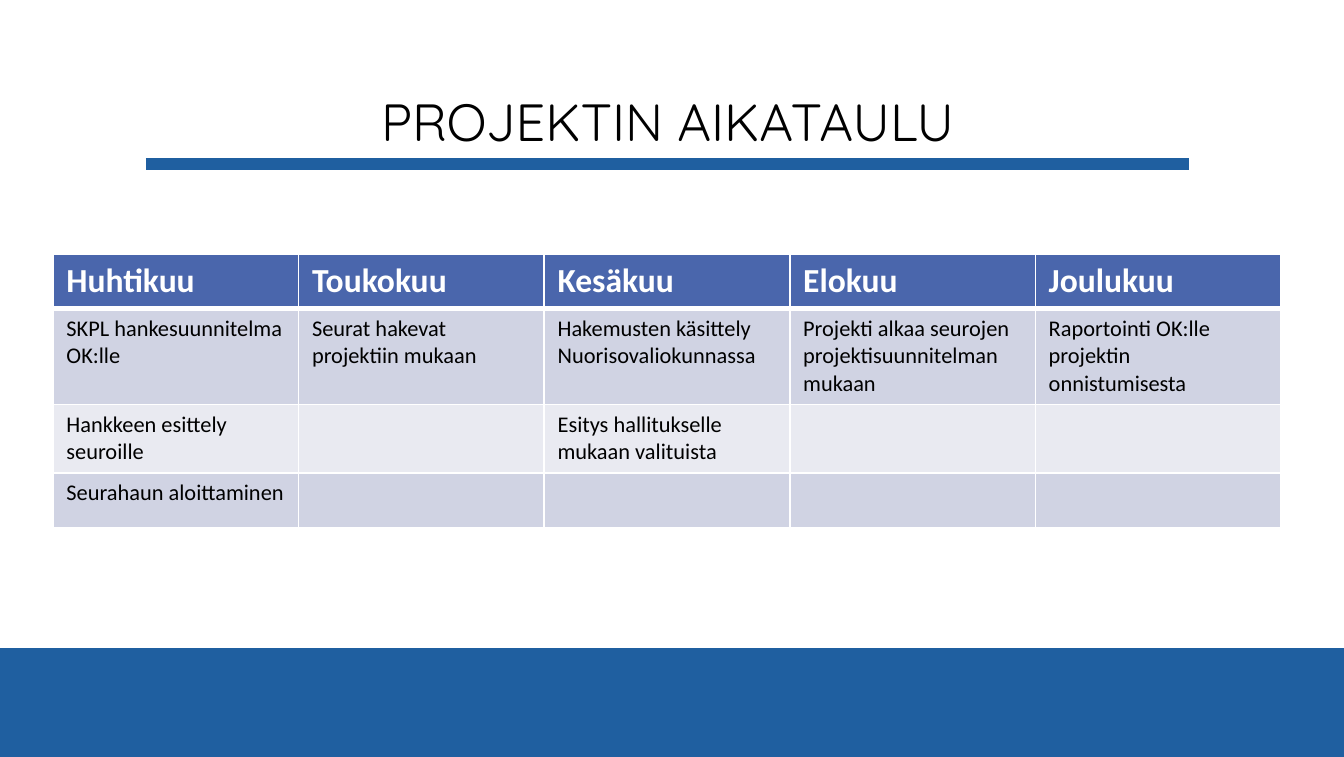
import pptx
import pptx.dml.color
import pptx.enum.shapes
import pptx.enum.text
import pptx.oxml
import pptx.oxml.ns
import pptx.util

PX = 914400 / 134.4
WIDTH, HEIGHT = 1344, 757
COLORS = {
    "blue": "1F5FA0",
    "header": "4A66AC",
    "odd": "D0D3E3",
    "even": "E9EAF1",
    "white": "FFFFFF",
    "black": "000000",
}
ROW_HEIGHTS = [54, 96, 67, 54]
SCHEDULE = [
    ["Huhtikuu", "Toukokuu", "Kesäkuu", "Elokuu", "Joulukuu"],
    [
        "SKPL hankesuunnitelma OK:lle",
        "Seurat hakevat projektiin mukaan",
        "Hakemusten käsittely Nuorisovaliokunnassa",
        "Projekti alkaa seurojen projektisuunnitelman mukaan",
        "Raportointi OK:lle projektin onnistumisesta",
    ],
    ["Hankkeen esittely seuroille", "", "Esitys hallitukselle mukaan valituista", "", ""],
    ["Seurahaun aloittaminen", "", "", "", ""],
]


def px(n):
    return pptx.util.Emu(round(n * PX))


def color(name):
    return pptx.dml.color.RGBColor.from_string(COLORS[name])


def add_run(p, text, size, font, color_name, bold=False):
    r = p.add_run()
    r.text = text
    r.font.size = pptx.util.Pt(size)
    r.font.name = font
    r.font.bold = bold
    r.font.color.rgb = color(color_name)


def add_band(slide, x, y, w, h):
    s = slide.shapes.add_shape(
        pptx.enum.shapes.MSO_SHAPE.RECTANGLE, px(x), px(y), px(w), px(h))
    s.shadow.inherit = False
    s.fill.solid()
    s.fill.fore_color.rgb = color("blue")
    s.line.fill.background()


def add_rule(slide, x1, x2, y, weight):
    s = slide.shapes.add_connector(
        pptx.enum.shapes.MSO_CONNECTOR.STRAIGHT, px(x1), px(y), px(x2), px(y))
    s.line.color.rgb = color("blue")
    s.line.width = pptx.util.Pt(weight)
    s._element.spPr.append(pptx.oxml.parse_xml(
        f'<a:effectLst {pptx.oxml.ns.nsdecls("a")}/>'))


def add_title(slide, x, y, w, h, text):
    tf = slide.shapes.add_textbox(px(x), px(y), px(w), px(h)).text_frame
    tf.word_wrap = True
    tf.vertical_anchor = pptx.enum.text.MSO_ANCHOR.BOTTOM
    p = tf.paragraphs[0]
    p.alignment = pptx.enum.text.PP_ALIGN.CENTER
    add_run(p, text, 28, "Quicksand", "black")


def set_borders(cell, **weights):
    """Draw white borders; weights maps the sides L, R, T, B to points."""
    tc_pr = cell._tc.get_or_add_tcPr()
    for i, side in enumerate("LRTB"):
        tc_pr.insert(i, pptx.oxml.parse_xml(
            f'<a:ln{side} {pptx.oxml.ns.nsdecls("a")} w="{pptx.util.Pt(weights[side])}">'
            f'<a:solidFill><a:srgbClr val="{COLORS["white"]}"/></a:solidFill></a:ln{side}>'))


def add_schedule(slide, x, y, w):
    table = slide.shapes.add_table(
        len(SCHEDULE), len(SCHEDULE[0]), px(x), px(y), px(w), px(sum(ROW_HEIGHTS))).table
    for i, (texts, height) in enumerate(zip(SCHEDULE, ROW_HEIGHTS)):
        table.rows[i].height = px(height)
        header = i == 0
        fill = "header" if header else "odd" if i % 2 else "even"
        for j, text in enumerate(texts):
            cell = table.cell(i, j)
            cell.fill.solid()
            cell.fill.fore_color.rgb = color(fill)
            set_borders(cell, L=1, R=1, T=3 if i == 1 else 1, B=3 if header else 1)
            if text:
                add_run(cell.text_frame.paragraphs[0], text, 18 if header else 12,
                        "Calibri", "white" if header else "black", header)


def main():
    prs = pptx.Presentation()
    prs.slide_width = pptx.util.Inches(10)
    prs.slide_height = pptx.util.Inches(5.63)
    slide = prs.slides.add_slide(prs.slide_layouts[6])
    add_band(slide, 0, 648, WIDTH, HEIGHT - 648)
    add_rule(slide, 146, 1189, 164, 6)
    add_schedule(slide, 53, 254, 1228)
    add_title(slide, 146, 0, 1043, 159, "PROJEKTIN AIKATAULU")
    prs.save("out.pptx")


if __name__ == "__main__":
    main()
